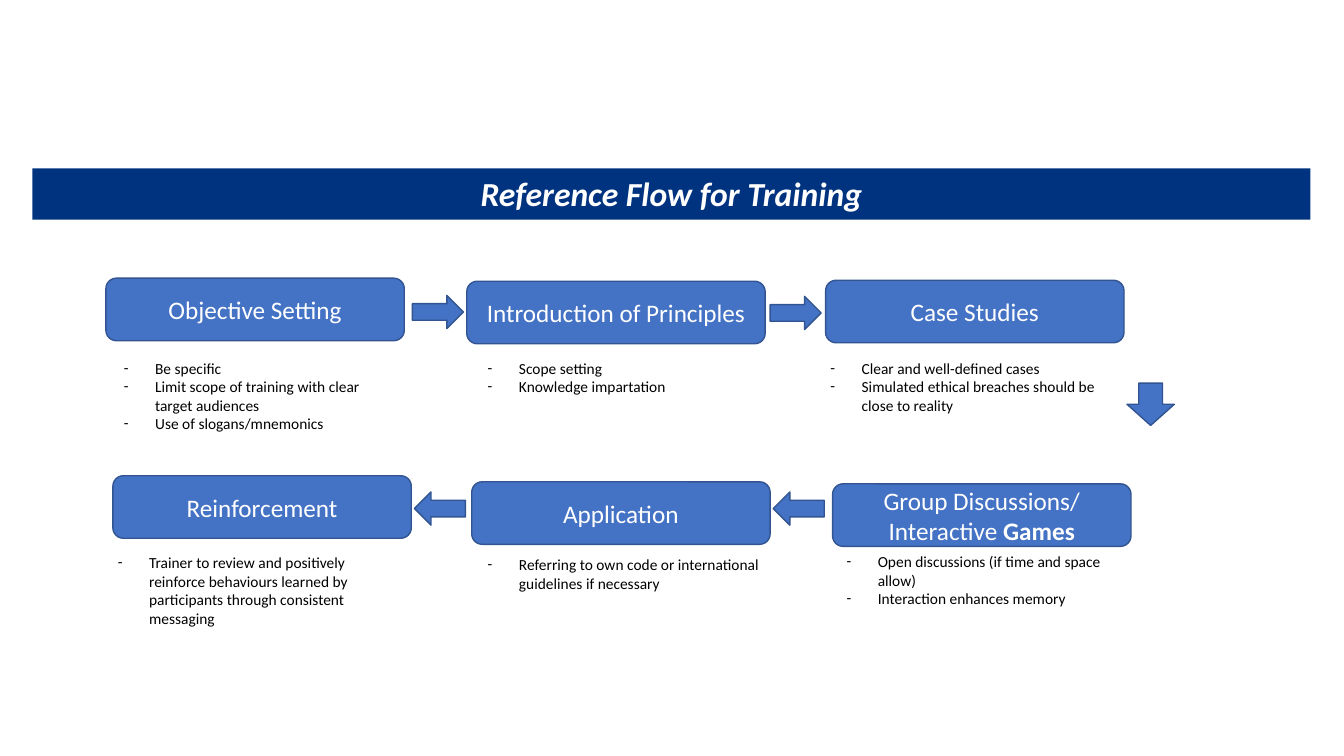
import dataclasses
import typing

import pptx
import pptx.dml.color
import pptx.enum.shapes
import pptx.enum.text
import pptx.oxml
import pptx.oxml.ns
import pptx.util

KIND = pptx.enum.shapes.MSO_SHAPE
ALIGN = pptx.enum.text.PP_ALIGN
ANCHOR = pptx.enum.text.MSO_ANCHOR
Pt = pptx.util.Pt

HUES = {"band": "00337F", "box": "4472C4", "edge": "325491",
        "light": "FFFFFF", "dark": "000000"}
TITLE = {"name": "Calibri", "size": Pt(24), "bold": True, "italic": True}
LABEL = {"name": "Calibri", "size": Pt(18)}
NOTE = {"name": "Calibri", "size": Pt(11)}
INDENT = pptx.util.Inches(0.31)


class Area(typing.NamedTuple):
    """Left, top, width and height in percent of the slide's size."""
    x: float
    y: float
    w: float
    h: float


@dataclasses.dataclass
class Step:
    label: str
    x: float
    y: float
    area: Area
    notes: list[str]
    strong: str = ""


@dataclasses.dataclass
class Arrow:
    area: Area
    kind: typing.Any = KIND.RIGHT_ARROW
    turn: int = 0


BAND = Area(2.4, 22.27, 95.1, 6.8)
STEP_W, STEP_H = 22.2, 8.27
ARROW_W, ARROW_H = 3.8, 4.4

STEPS = [
    Step("Objective Setting", 7.88, 36.8, Area(8.48, 46.8, 21.15, 11.2),
         ["Be specific", "Limit scope of training with clear target audiences",
          "Use of slogans/mnemonics"]),
    Step("Introduction of Principles", 34.73, 37.2, Area(35.55, 46.8, 19.95, 6.27),
         ["Scope setting", "Knowledge impartation"]),
    Step("Case Studies", 61.43, 37.07, Area(61.05, 46.8, 22.2, 8.8),
         ["Clear and well-defined cases",
          "Simulated ethical breaches should be close to reality"]),
    Step("Group Discussions/ Interactive ", 61.95, 64, Area(62.25, 72.4, 21.68, 8.8),
         ["Open discussions (if time and space allow)",
          "Interaction enhances memory"], strong="Games"),
    Step("Application", 35.1, 63.73, Area(35.55, 72.8, 22.2, 6.27),
         ["Referring to own code or international guidelines if necessary"]),
    Step("Reinforcement", 8.4, 62.93, Area(8.03, 72.53, 22.2, 11.2),
         ["Trainer to review and positively reinforce behaviours learned by "
          "participants through consistent messaging"]),
]

ARROWS = [
    Arrow(Area(30.68, 39.07, ARROW_W, ARROW_H)),
    Arrow(Area(57.3, 39.2, ARROW_W, ARROW_H)),
    Arrow(Area(83.85, 50.67, 3.53, 5.6), KIND.DOWN_ARROW),
    Arrow(Area(57.53, 65.07, ARROW_W, ARROW_H), turn=180),
    Arrow(Area(30.83, 65.07, ARROW_W, ARROW_H), turn=180),
]

deck = pptx.Presentation()
deck.slide_width = pptx.util.Inches(13.33)
deck.slide_height = pptx.util.Inches(7.5)
slide = deck.slides.add_slide(deck.slide_layouts[6])


def place(area: Area) -> list[int]:
    """Turn percent shares into lengths on the slide."""
    sides = (deck.slide_width, deck.slide_height) * 2
    return [round(part * side / 100) for part, side in zip(area, sides)]


def hue(name: str) -> pptx.dml.color.RGBColor:
    return pptx.dml.color.RGBColor.from_string(HUES[name])


def style(font: typing.Any, form: dict, color: str) -> None:
    for key, value in form.items():
        setattr(font, key, value)
    font.color.rgb = hue(color)


def shape(kind: typing.Any, area: Area, fill: str, edge: str = "") -> typing.Any:
    item = slide.shapes.add_shape(kind, *place(area))
    item.shadow.inherit = False
    item.fill.solid()
    item.fill.fore_color.rgb = hue(fill)
    if edge:
        item.line.color.rgb = hue(edge)
        item.line.width = Pt(1)
    else:
        item.line.fill.background()
    return item


def write(item: typing.Any, text: str, form: dict, anchor: typing.Any,
          strong: str = "") -> None:
    """Centre white text in a shape, with an optional bold ending."""
    frame = item.text_frame
    frame.word_wrap = True
    frame.vertical_anchor = anchor
    para = frame.paragraphs[0]
    para.alignment = ALIGN.CENTER
    runs = [(text, {})] + ([(strong, {"bold": True})] if strong else [])
    for words, extra in runs:
        run = para.add_run()
        run.text = words
        style(run.font, form | extra, "light")


def dash(para: typing.Any) -> None:
    """Give a paragraph a hanging dash bullet."""
    props = para._p.get_or_add_pPr()
    props.set("marL", str(INDENT))
    props.set("indent", str(-INDENT))
    space = pptx.oxml.ns.nsdecls("a")
    for tag in ('buFont typeface="Calibri"', 'buChar char="-"'):
        props.append(pptx.oxml.parse_xml(f"<a:{tag} {space}/>"))


def jot(area: Area, notes: list[str]) -> None:
    frame = slide.shapes.add_textbox(*place(area)).text_frame
    frame.word_wrap = True
    for index, note in enumerate(notes):
        para = frame.add_paragraph() if index else frame.paragraphs[0]
        dash(para)
        run = para.add_run()
        run.text = note
        style(run.font, NOTE, "dark")


def main() -> None:
    band = shape(KIND.RECTANGLE, BAND, "band")
    write(band, "Reference Flow for Training", TITLE, ANCHOR.TOP)
    for step in STEPS:
        area = Area(step.x, step.y, STEP_W, STEP_H)
        box = shape(KIND.ROUNDED_RECTANGLE, area, "box", "edge")
        write(box, step.label, LABEL, ANCHOR.MIDDLE, step.strong)
        jot(step.area, step.notes)
    for arrow in ARROWS:
        item = shape(arrow.kind, arrow.area, "box", "edge")
        item.rotation = arrow.turn
    deck.save("out.pptx")


if __name__ == "__main__":
    main()
